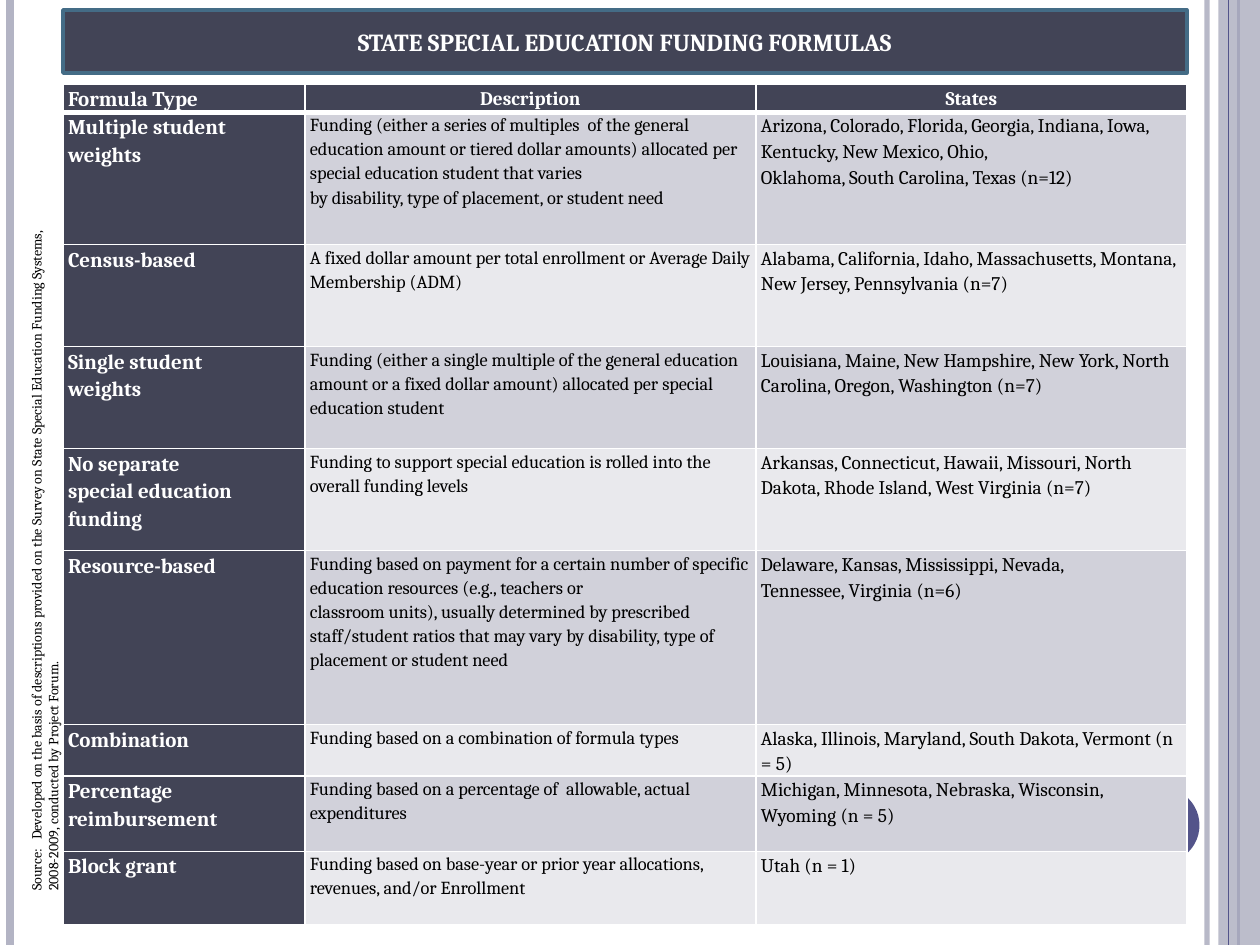
from lxml import etree
from pptx import Presentation
from pptx.dml.color import RGBColor
from pptx.enum.shapes import MSO_CONNECTOR, MSO_SHAPE
from pptx.enum.text import MSO_ANCHOR, MSO_AUTO_SIZE, PP_ALIGN
from pptx.oxml.ns import qn
from pptx.util import Inches, Pt

RECT, OVAL = MSO_SHAPE.RECTANGLE, MSO_SHAPE.OVAL
LINE = MSO_CONNECTOR.STRAIGHT
LEFT, CENTER = PP_ALIGN.LEFT, PP_ALIGN.CENTER
MIDDLE, GROW = MSO_ANCHOR.MIDDLE, MSO_AUTO_SIZE.SHAPE_TO_FIT_TEXT

DARK, WHITE, BLACK = "424456", "FFFFFF", "000000"
INDIGO, LILAC, EDGE = "53548A", "B3B4C4", "446C86"
BANDS = ("D1D1DA", "E9E9ED")

WIDTHS = (1.92, 3.58, 3.42)
HEIGHTS = (0.21, 1.05, 0.81, 0.81, 0.81, 1.38, 0.4, 0.6, 0.58)
HEADS = ("Formula Type", "Description", "States")
# Each line break inside a cell starts a new paragraph.
ROWS = (
    ("Multiple student\nweights",
     "Funding (either a series of multiples  of the general education amount or "
     "tiered dollar amounts) allocated per special education student that varies\n"
     "by disability, type of placement, or student need",
     "Arizona, Colorado, Florida, Georgia, Indiana, Iowa, Kentucky, New Mexico, "
     "Ohio,\nOklahoma, South Carolina, Texas (n=12)"),
    ("Census-based",
     "A fixed dollar amount per total enrollment or Average Daily Membership (ADM)",
     "Alabama, California, Idaho, Massachusetts, Montana, New Jersey, "
     "Pennsylvania (n=7)"),
    ("Single student\nweights",
     "Funding (either a single multiple of the general education amount or a "
     "fixed dollar amount) allocated per special education student",
     "Louisiana, Maine, New Hampshire, New York, North Carolina, Oregon, "
     "Washington (n=7)"),
    ("No separate\nspecial education\nfunding",
     "Funding to support special education is rolled into the overall funding "
     "levels",
     "Arkansas, Connecticut, Hawaii, Missouri, North Dakota, Rhode Island, "
     "West Virginia (n=7)"),
    ("Resource-based",
     "Funding based on payment for a certain number of specific education "
     "resources (e.g., teachers or\nclassroom units), usually determined by "
     "prescribed staff/student ratios that may vary by disability, type of "
     "placement or student need",
     "Delaware, Kansas, Mississippi, Nevada,\nTennessee, Virginia (n=6)"),
    ("Combination",
     "Funding based on a combination of formula types",
     "Alaska, Illinois, Maryland, South Dakota, Vermont (n = 5)"),
    ("Percentage\nreimbursement",
     "Funding based on a percentage of  allowable, actual expenditures",
     "Michigan, Minnesota, Nebraska, Wisconsin,\nWyoming (n = 5)"),
    ("Block grant",
     "Funding based on base-year or prior year allocations, revenues, and/or "
     "Enrollment",
     "Utah (n = 1)"),
)
SOURCE = ("Source:   Developed on the basis of descriptions provided on the Survey "
          "on State Special Education Funding Systems, 2008-2009, conducted by "
          "Project Forum.")


def color(code):
    return RGBColor.from_string(code)


def assign(target, values):
    for name, value in values.items():
        setattr(target, name, value)


def fade(props, percent):
    """Set the opacity of the first solid colour under props."""
    rgb = props.find(".//" + qn("a:srgbClr"))
    etree.SubElement(rgb, qn("a:alpha"), val=str(percent * 1000))


class Deck:
    font = "Cambria"

    def __init__(self, slide):
        self.slide = slide
        self.shapes = slide.shapes

    def label(self, frame, text, size, ink, bold=False, align=LEFT, gap=None):
        frame.word_wrap = True
        for i, part in enumerate(text.split("\n")):
            para = frame.paragraphs[0] if i == 0 else frame.add_paragraph()
            assign(para, {"alignment": align, "line_spacing": gap})
            run = para.add_run()
            run.text = part
            assign(run.font, {"name": self.font, "size": Pt(size), "bold": bold})
            run.font.color.rgb = color(ink)

    def rule(self, x, width, ink, alpha=None):
        """Draw a line down the full height of the slide."""
        line = self.shapes.add_connector(
            LINE, Inches(x), 0, Inches(x), Inches(7.5))
        line.line.width = Pt(width)
        line.line.color.rgb = color(ink)
        props = line._element.spPr
        if alpha:
            fade(props, alpha)
        etree.SubElement(props, qn("a:effectLst"))

    def shape(self, kind, box, fill, edge=None, alpha=None):
        item = self.shapes.add_shape(kind, *map(Inches, box))
        item.shadow.inherit = False
        item.fill.solid()
        item.fill.fore_color.rgb = color(fill)
        if alpha:
            fade(item._element.spPr, alpha)
        if edge:
            item.line.color.rgb = color(edge)
            item.line.width = Pt(2)
        else:
            item.line.fill.background()
        return item

    def banner(self, box, text):
        frame = self.shape(RECT, box, DARK, EDGE).text_frame
        frame.vertical_anchor = MIDDLE
        self.label(frame, text, 14, WHITE, True, CENTER)

    def side(self, box, text):
        """Add a text box that reads from bottom to top."""
        frame = self.shapes.add_textbox(*map(Inches, box)).text_frame
        self.label(frame, text, 8, BLACK)
        frame.auto_size = GROW
        frame._txBody.bodyPr.set("vert", "vert270")

    def border(self, cell, row):
        props = cell._tc.get_or_add_tcPr()
        widths = {"L": 1, "R": 1, "T": 3 if row == 1 else 1,
                  "B": 3 if row == 0 else 1}
        for edge, width in widths.items():
            line = etree.SubElement(props, qn("a:ln" + edge), w=str(Pt(width)))
            fill = etree.SubElement(line, qn("a:solidFill"))
            etree.SubElement(fill, qn("a:srgbClr"), val=WHITE)

    def table(self, box, rows):
        grid = self.shapes.add_table(
            len(rows), len(WIDTHS), *map(Inches, box)).table
        for col, width in zip(grid.columns, WIDTHS):
            col.width = Inches(width)
        for r, row in enumerate(rows):
            grid.rows[r].height = Inches(HEIGHTS[r])
            for c, text in enumerate(row):
                cell = grid.cell(r, c)
                dark = r == 0 or c == 0
                size = 12 if c == 0 else 11 if r == 0 or c == 2 else 10.5
                assign(cell, {"margin_left": Inches(0.04), "margin_top": 0,
                              "margin_right": Inches(0.04), "margin_bottom": 0})
                self.border(cell, r)
                cell.fill.solid()
                cell.fill.fore_color.rgb = color(DARK if dark else BANDS[(r - 1) % 2])
                self.label(cell.text_frame, text, size, WHITE if dark else BLACK,
                           dark, CENTER if r == 0 and c else LEFT, 1.15)


def main():
    prs = Presentation()
    assign(prs, {"slide_width": Inches(10), "slide_height": Inches(7.5)})
    deck = Deck(prs.slides.add_slide(prs.slide_layouts[6]))
    deck.rule(9.58, 3, LILAC, 93)
    deck.rule(0.08, 4.5, LILAC)
    deck.rule(9.83, 1.5, INDIGO)
    deck.shape(RECT, (9.67, 0, 0.33, 7.5), LILAC, alpha=87)
    deck.rule(9.75, 0.75, INDIGO)
    deck.shape(OVAL, (8.92, 6.25, 0.6, 0.6), INDIGO)
    deck.table((0.5, 0.67, 8.92, 6.69), (HEADS, *ROWS))
    deck.side((0.17, 1.5, 0.61, 5.67), SOURCE)
    deck.banner((0.5, 0.08, 8.92, 0.5), "STATE SPECIAL EDUCATION FUNDING FORMULAS")
    prs.save("out.pptx")


if __name__ == "__main__":
    main()
